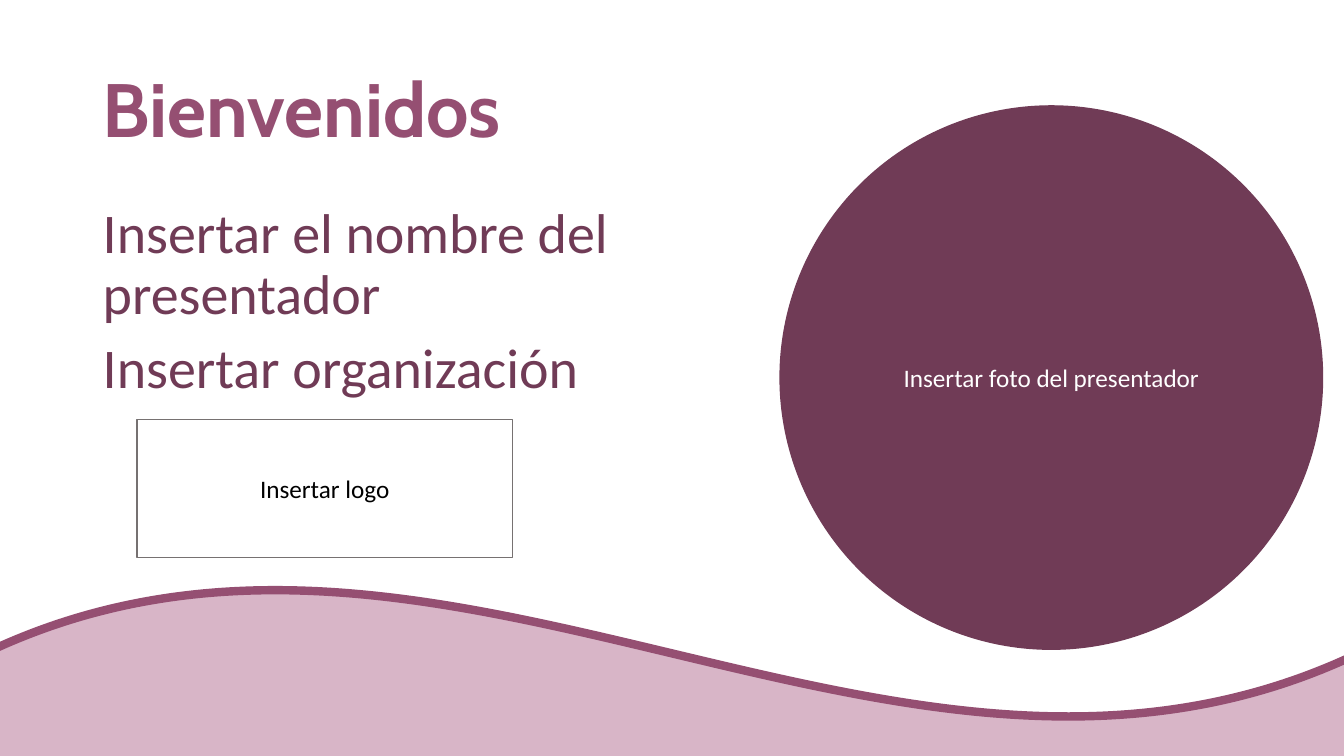
from dataclasses import dataclass

from pptx import Presentation
from pptx import util as u
from pptx.dml.color import RGBColor
from pptx.enum import shapes, text


@dataclass(frozen=True)
class Theme:
    plum: str = "703B56"
    mauve: str = "954F72"
    pink: str = "D8B5C7"
    gray: str = "767171"
    white: str = "FFFFFF"
    black: str = "000000"
    head: str = "Cabin"
    body: str = "Calibri"
    big: int = 54
    mid: int = 40
    small: int = 18


class Page:
    def __init__(self, deck, theme):
        self.theme = theme
        self.slide = deck.slides.add_slide(deck.slide_layouts[5])

    def box(self, *dims):
        return [u.Cm(d) for d in dims]

    def fill_text(self, frame, lines, size, color, face, bold=False,
                  align=text.PP_ALIGN.LEFT, lead=1.0, gap=0):
        frame.word_wrap = True
        frame.auto_size = text.MSO_AUTO_SIZE.NONE
        frame.text = "\n".join(lines)
        for i, para in enumerate(frame.paragraphs):
            para.alignment = align
            para.line_spacing = lead
            para.space_before = u.Pt(gap if i else 0)
            font = para.font
            font.name, font.size, font.bold = face, u.Pt(size), bold
            font.color.rgb = RGBColor.from_string(color)

    def title(self, words, dims):
        t = self.theme
        head = self.slide.shapes.title
        head.left, head.top, head.width, head.height = self.box(*dims)
        head.text_frame.vertical_anchor = text.MSO_ANCHOR.MIDDLE
        self.fill_text(head.text_frame, [words], t.big, t.mauve, t.head,
                       bold=True, lead=0.9)

    def body(self, lines, dims):
        t = self.theme
        area = self.slide.shapes.add_textbox(*self.box(*dims))
        self.fill_text(area.text_frame, lines, t.mid, t.plum, t.body,
                       lead=0.9, gap=10)

    def shape(self, kind, dims, fill, line, width=1):
        item = self.slide.shapes.add_shape(kind, *self.box(*dims))
        item.shadow.inherit = False
        item.fill.solid()
        item.fill.fore_color.rgb = RGBColor.from_string(fill)
        item.line.color.rgb = RGBColor.from_string(line)
        item.line.width = u.Pt(width)
        return item

    def label(self, item, words, color):
        t = self.theme
        item.text_frame.vertical_anchor = text.MSO_ANCHOR.MIDDLE
        self.fill_text(item.text_frame, [words], t.small, color, t.body,
                       align=text.PP_ALIGN.CENTER)

    def back(self, item):
        item.element.getparent().insert(2, item.element)


def main():
    deck = Presentation()
    deck.slide_width, deck.slide_height = u.Cm(33.87), u.Cm(19.05)
    theme = Theme()
    page = Page(deck, theme)
    kind = shapes.MSO_SHAPE

    wave = page.shape(kind.WAVE, (-0.38, 14.81, 34.62, 13.23),
                      theme.pink, theme.mauve, 6)
    page.back(wave)
    page.title("Bienvenidos", (2.34, 1.02, 29.21, 3.68))
    page.body(["Insertar el nombre del presentador", "Insertar organización"],
              (2.34, 5.05, 17.32, 12.09))
    photo = page.shape(kind.OVAL, (19.66, 2.67, 13.67, 13.69),
                       theme.plum, theme.plum)
    page.label(photo, "Insertar foto del presentador", theme.white)
    logo = page.shape(kind.RECTANGLE, (3.45, 10.57, 9.47, 3.48),
                      theme.white, theme.gray)
    page.label(logo, "Insertar logo", theme.black)
    deck.save("out.pptx")


if __name__ == "__main__":
    main()
